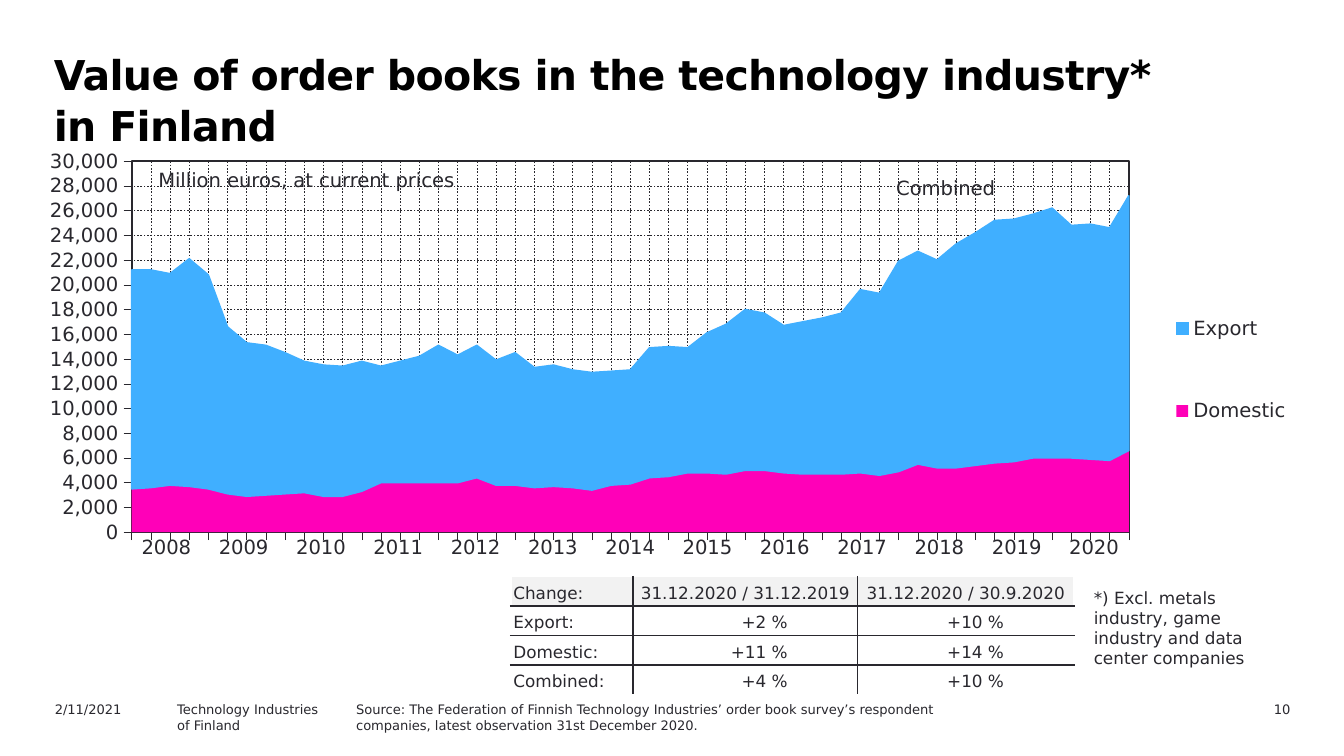
from lxml import etree
from pptx import Presentation
from pptx.chart.data import CategoryChartData
from pptx.dml.color import RGBColor
from pptx.enum.chart import XL_CHART_TYPE, XL_LEGEND_POSITION, XL_TICK_LABEL_POSITION, XL_TICK_MARK
from pptx.enum.dml import MSO_LINE
from pptx.enum.text import MSO_ANCHOR, MSO_AUTO_SIZE, PP_ALIGN
from pptx.oxml import parse_xml
from pptx.oxml.ns import nsdecls, qn
from pptx.util import Inches, Pt

AREA = XL_CHART_TYPE.AREA_STACKED
LEGEND_RIGHT = XL_LEGEND_POSITION.RIGHT
NO_LABELS = XL_TICK_LABEL_POSITION.NONE
OUTSIDE = XL_TICK_MARK.OUTSIDE
DASH = MSO_LINE.DASH
LEFT, CENTER, RIGHT = PP_ALIGN.LEFT, PP_ALIGN.CENTER, PP_ALIGN.RIGHT
TOP, BOTTOM = MSO_ANCHOR.TOP, MSO_ANCHOR.BOTTOM
NO_FIT = MSO_AUTO_SIZE.NONE

FONT = "DejaVu Sans"
COLORS = {"ink": "29282E", "black": "000000", "white": "FFFFFF",
          "head": "F2F2F2", "domestic": "FF00B8", "export": "40AFFF"}
CHART_BOX = (0.28, 1.11, 9.42, 3.12)

DOMESTIC = [
    3500, 3600, 3800, 3700, 3500, 3100, 2900, 3000, 3100, 3200, 2900, 2900, 3300, 4000,
    4000, 4000, 4000, 4000, 4400, 3800, 3800, 3600, 3700, 3600, 3400, 3800, 3900, 4400,
    4500, 4800, 4800, 4700, 5000, 5000, 4800, 4700, 4700, 4700, 4800, 4600, 4900, 5500,
    5200, 5200, 5400, 5600, 5700, 6000, 6000, 6000, 5900, 5800, 6600]
EXPORT = [
    17700, 17600, 17100, 18400, 17300, 13500, 12400, 12100, 11400, 10600, 10600, 10500,
    10500, 9400, 9800, 10200, 11100, 10300, 10700, 10100, 10700, 9700, 9800, 9500, 9500,
    9200, 9200, 10500, 10500, 10100, 11300, 12100, 13000, 12700, 11900, 12300, 12600,
    13000, 14800, 14700, 17000, 17200, 16800, 18100, 18800, 19600, 19600, 19700, 20200,
    18800, 19000, 18800, 20600]
CHANGES = [
    ["Change:", "31.12.2020 / 31.12.2019", "31.12.2020 / 30.9.2020"],
    ["Export:", "+2 %", "+10 %"],
    ["Domestic:", "+11 %", "+14 %"],
    ["Combined:", "+4 %", "+10 %"]]


def color(name):
    return RGBColor.from_string(COLORS[name])


def style(font, size, name="ink", bold=False):
    font.name, font.size, font.bold = FONT, Pt(size), bold
    font.color.rgb = color(name)


def write(frame, text, size, align=LEFT, name="ink", bold=False):
    frame.text = text
    for para in frame.paragraphs:
        para.alignment = align
        for run in para.runs:
            style(run.font, size, name, bold)


def place(shape, box):
    shape.left, shape.top, shape.width, shape.height = map(Inches, box)
    frame = shape.text_frame
    frame.auto_size, frame.vertical_anchor, frame.word_wrap = NO_FIT, TOP, True
    return frame


def add_label(slide, box, text, size, align=LEFT):
    label = slide.shapes.add_textbox(*map(Inches, box))
    write(place(label, box), text, size, align)


def fill_title(slide):
    frame = place(slide.shapes.title, (0.28, 0.31, 8.74, 0.71))
    write(frame, "Value of order books in the technology industry* in Finland",
          22, name="black", bold=True)
    para = frame.paragraphs[0]
    para.line_spacing = Pt(27)
    para._p.get_or_add_pPr().set("marL", str(Inches(0.02)))
    para.runs[0].font._element.set("spc", "-33")


def fill_source(slide):
    frame = place(slide.placeholders[1], (2.55, 5.17, 5, 0.26))
    write(frame, "Source: The Federation of Finnish Technology Industries’ order book "
          "survey’s respondent companies, latest observation 31st December 2020.", 7)
    para = frame.paragraphs[0]
    para.space_before = Pt(0)
    props = para._p.get_or_add_pPr()
    props.set("marL", "0")
    props.set("indent", "0")
    etree.SubElement(props, qn("a:buNone"))


def set_layout(parent, index, box, inner=False):
    """Give a chart part a fixed place, in inches from the chart's corner."""
    for old in parent.findall(qn("c:layout")):
        parent.remove(old)
    target = '<c:layoutTarget val="inner"/>' if inner else ""
    modes = "".join(f'<c:{key}Mode val="edge"/>' for key in "xy")
    sizes = "".join(f'<c:{key} val="{val / full}"/>'
                    for key, val, full in zip("xywh", box, CHART_BOX[2:] * 2))
    parent.insert(index, parse_xml(
        f'<c:layout {nsdecls("c")}><c:manualLayout>{target}{modes}{sizes}'
        '</c:manualLayout></c:layout>'))


def style_axis(axis):
    axis.major_tick_mark = OUTSIDE
    axis.has_major_gridlines = True
    axis.format.line.color.rgb = color("ink")
    axis.format.line.width = Pt(0.22)
    grid = axis.major_gridlines.format.line
    grid.color.rgb = color("ink")
    grid.width, grid.dash_style = Pt(0.25), DASH


def add_orders(slide):
    data = CategoryChartData(number_format="#,##0")
    data.categories = [str(i + 1) for i in range(len(EXPORT))]
    data.add_series("Domestic", DOMESTIC)
    data.add_series("Export", EXPORT)
    chart = slide.shapes.add_chart(AREA, *map(Inches, CHART_BOX), data).chart
    style(chart.font, 10.5)
    chart.has_title = False
    chart.plots[0].vary_by_categories = False
    for series in chart.plots[0].series:
        series.format.fill.solid()
        series.format.fill.fore_color.rgb = color(series.name.lower())
    line = chart.plots[0].series[1].format.line
    line.color.rgb, line.width = color("export"), Pt(0.88)

    style_axis(chart.category_axis)
    chart.category_axis.tick_label_position = NO_LABELS
    axis = chart.value_axis
    style_axis(axis)
    axis.minimum_scale, axis.maximum_scale, axis.major_unit = 0, 30000, 2000
    axis.tick_labels.number_format = "#,##0"
    axis.tick_labels.number_format_is_linked = False
    style(axis.tick_labels.font, 10.5)
    for cross in axis._element.findall(qn("c:crossBetween")):
        cross.set("val", "midCat")

    chart.has_legend = True
    chart.legend.position = LEGEND_RIGHT
    chart.legend.include_in_layout = False
    style(chart.legend.font, 10.5)
    set_layout(chart.legend._element, 1, (8.36, 0.8, 1.04, 1.68))
    area = chart._chartSpace.chart.plotArea
    set_layout(area, 0, (0.7, 0.09, 7.42, 2.76), inner=True)
    area.append(parse_xml(
        f'<c:spPr {nsdecls("c", "a")}><a:noFill/><a:ln w="12700"><a:solidFill>'
        f'<a:srgbClr val="{COLORS["ink"]}"/></a:solidFill></a:ln></c:spPr>'))


def set_border(cell, side, name=None):
    """Draw one side of a cell, or hide it when no colour is named."""
    line = etree.SubElement(cell._tc.get_or_add_tcPr(), qn("a:ln" + side), w="12700")
    if name:
        fill = etree.SubElement(line, qn("a:solidFill"))
        etree.SubElement(fill, qn("a:srgbClr"), val=COLORS[name])
    else:
        etree.SubElement(line, qn("a:noFill"))


def add_grid(slide, box, rows, cols):
    table = slide.shapes.add_table(rows, len(cols), *map(Inches, box)).table
    table.first_row = table.horz_banding = False
    for col, width in zip(table.columns, cols):
        col.width = Inches(width)
    return table


def add_changes(slide):
    table = add_grid(slide, (3.8, 4.29, 4.19, 0.88), 4, (0.91, 1.67, 1.61))
    for i, row in enumerate(CHANGES):
        for j, text in enumerate(row):
            cell = table.cell(i, j)
            outer = {"L": j == 0, "R": j == 2, "T": i == 0, "B": i == 3}
            for side, edge in outer.items():
                set_border(cell, side, "white" if edge else "ink")
            cell.fill.solid()
            cell.fill.fore_color.rgb = color("white" if i else "head")
            cell.vertical_anchor = BOTTOM
            cell.margin_left = cell.margin_top = cell.margin_bottom = Inches(0.02)
            cell.margin_right = Inches(0.52 if i and j else 0.02)
            align = LEFT if j == 0 else RIGHT if i else CENTER
            write(cell.text_frame, text, 9, align)


def add_years(slide):
    years = range(2008, 2021)
    table = add_grid(slide, (0.95, 3.94, 7.48, 0.31), 1, [7.48 / len(years)] * len(years))
    for cell, year in zip(table.rows[0].cells, years):
        for side in "LRTB":
            set_border(cell, side)
        cell.fill.background()
        write(cell.text_frame, str(year), 10.5, CENTER)


def main():
    deck = Presentation()
    deck.slide_width = Inches(10)
    deck.slide_height = deck.slide_width * 9 // 16
    slide = deck.slides.add_slide(deck.slide_layouts[1])
    fill_title(slide)
    fill_source(slide)
    add_orders(slide)
    add_changes(slide)
    add_years(slide)
    add_label(slide, (1.08, 1.2, 2.44, 0.27), "Million euros, at current prices", 10.5)
    add_label(slide, (6.57, 1.26, 1.06, 0.27), "Combined", 10.5)
    add_label(slide, (8.04, 4.32, 1.66, 0.71),
              "*) Excl. metals industry, game industry and data center companies", 9)
    add_label(slide, (0.31, 5.17, 1, 0.18), "2/11/2021", 7)
    add_label(slide, (1.22, 5.17, 1.8, 0.18), "Technology Industries\nof Finland", 7)
    add_label(slide, (8.76, 5.17, 0.94, 0.18), "10", 7, RIGHT)
    deck.save("out.pptx")


if __name__ == "__main__":
    main()
